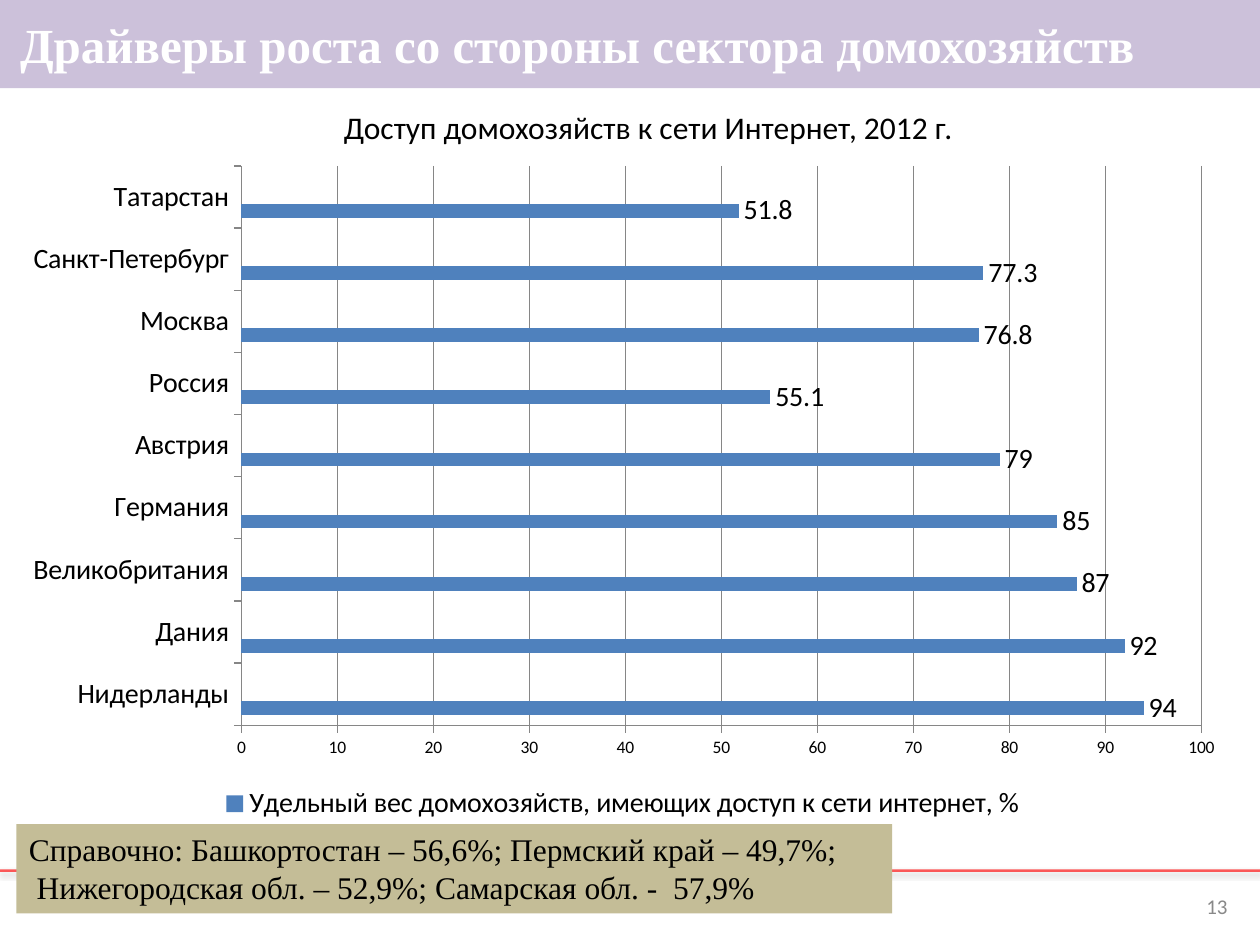
from lxml import etree
from pptx import Presentation
from pptx.chart.data import CategoryChartData
from pptx.dml.color import RGBColor
from pptx.enum.chart import XL_CHART_TYPE, XL_LABEL_POSITION, XL_LEGEND_POSITION, XL_TICK_MARK
from pptx.enum.shapes import MSO_CONNECTOR, MSO_SHAPE
from pptx.enum.text import MSO_ANCHOR, PP_ALIGN
from pptx.oxml import parse_xml
from pptx.oxml.ns import nsdecls, qn
from pptx.util import Pt

BAR = XL_CHART_TYPE.BAR_CLUSTERED
OUTSIDE_END = XL_LABEL_POSITION.OUTSIDE_END
BOTTOM = XL_LEGEND_POSITION.BOTTOM
TICK_OUT, TICK_NONE = XL_TICK_MARK.OUTSIDE, XL_TICK_MARK.NONE
STRAIGHT = MSO_CONNECTOR.STRAIGHT
RECTANGLE = MSO_SHAPE.RECTANGLE
TOP, MIDDLE = MSO_ANCHOR.TOP, MSO_ANCHOR.MIDDLE
LEFT, RIGHT, JUSTIFY = PP_ALIGN.LEFT, PP_ALIGN.RIGHT, PP_ALIGN.JUSTIFY

SERIF, SANS = "Times New Roman", "Calibri"
BLACK, WHITE, GRAY, AXIS_GRAY = "000000", "FFFFFF", "898989", "868686"
LILAC, SAND, RED = "CCC1DA", "C4BD97", "FF0000"
SERIES_COLORS = ["4F81BD", "C0504D", "9BBB59"]

HOUSEHOLD_ACCESS = {
    "Нидерланды": 94,
    "Дания": 92,
    "Великобритания": 87,
    "Германия": 85,
    "Австрия": 79,
    "Россия": 55.1,
    "Москва": 76.8,
    "Санкт-Петербург": 77.3,
    "Татарстан": 51.8,
}
ACCESS_SERIES = "Удельный вес домохозяйств, имеющих доступ к сети интернет, %"
EMPTY_SERIES = ["Series 2", "Столбец2"]
PLOT_AREA = {"x": 0.19, "y": 0.02, "w": 0.78, "h": 0.83}


def color(value):
    return RGBColor.from_string(value)


def apply(target, values):
    for name, value in values.items():
        setattr(target, name, value)


class SlideBuilder:
    def __init__(self, presentation):
        self.slide = presentation.slides.add_slide(presentation.slide_layouts[6])

    def style_font(self, font, size, name=SANS, hue=BLACK, bold=False):
        apply(font, {"size": Pt(size), "name": name, "bold": bold})
        font.color.rgb = color(hue)

    def fill_text(self, shape, lines, font, align=LEFT, frame=None):
        text_frame = shape.text_frame
        apply(text_frame, {"word_wrap": True, "vertical_anchor": TOP, **(frame or {})})
        for index, line in enumerate(lines):
            paragraph = text_frame.add_paragraph() if index else text_frame.paragraphs[0]
            paragraph.alignment = align
            run = paragraph.add_run()
            run.text = line
            self.style_font(run.font, **font)

    def text(self, box, lines, font, **layout):
        shape = self.slide.shapes.add_textbox(*map(Pt, box))
        self.fill_text(shape, lines, font, **layout)

    def panel(self, box, fill, lines, font, **layout):
        shape = self.slide.shapes.add_shape(RECTANGLE, *map(Pt, box))
        shape.shadow.inherit = False
        shape.fill.solid()
        shape.fill.fore_color.rgb = color(fill)
        shape.line.fill.background()
        self.fill_text(shape, lines, font, **layout)

    def rule(self, start, end, hue, width):
        line = self.slide.shapes.add_connector(STRAIGHT, *map(Pt, (*start, *end)))
        line.line.color.rgb = color(hue)
        line.line.width = Pt(width)
        properties = line._element.spPr
        fill_color = properties.find(".//" + qn("a:srgbClr"))
        etree.SubElement(fill_color, qn("a:alpha"), val="64000")
        properties.append(parse_xml(
            f'<a:effectLst {nsdecls("a")}><a:outerShdw blurRad="{Pt(3.1)}" dist="{Pt(1.6)}" '
            'dir="5400000" rotWithShape="0"><a:srgbClr val="000000"><a:alpha val="38000"/>'
            '</a:srgbClr></a:outerShdw></a:effectLst>'))

    def bar_chart(self, box, values, name, empty_names):
        data = CategoryChartData()
        data.categories = list(values)
        data.add_series(name, list(values.values()))
        for empty_name in empty_names:
            data.add_series(empty_name, [None] * len(values))
        chart = self.slide.shapes.add_chart(BAR, *map(Pt, box), data).chart
        self.style_font(chart.font, 10)
        apply(chart, {"has_title": False, "has_legend": True})
        plot = chart.plots[0]
        apply(plot, {"gap_width": 150, "vary_by_categories": False})
        for series, hue in zip(plot.series, SERIES_COLORS):
            series.format.fill.solid()
            series.format.fill.fore_color.rgb = color(hue)
        labels = plot.series[0].data_labels
        apply(labels, {"show_value": True, "position": OUTSIDE_END})
        self.style_font(labels.font, 16)
        self.style_axes(chart)
        self.style_legend(chart.legend, len(empty_names))
        self.place_plot(chart)

    def style_axes(self, chart):
        categories, scale = chart.category_axis, chart.value_axis
        apply(scale, {"minimum_scale": 0, "maximum_scale": 100, "major_unit": 10,
                      "has_major_gridlines": True})
        for axis, size in ((categories, 16), (scale, 10)):
            apply(axis, {"major_tick_mark": TICK_OUT, "minor_tick_mark": TICK_NONE})
            self.style_font(axis.tick_labels.font, size)
        for line in (categories.format.line, scale.format.line, scale.major_gridlines.format.line):
            line.color.rgb = color(AXIS_GRAY)
            line.width = Pt(0.75)

    def style_legend(self, legend, hidden_count):
        apply(legend, {"position": BOTTOM, "include_in_layout": False})
        self.style_font(legend.font, 16)
        position = legend._element.find(qn("c:legendPos"))
        for index in reversed(range(hidden_count)):
            position.addnext(parse_xml(
                f'<c:legendEntry {nsdecls("c")}><c:idx val="{index}"/>'
                '<c:delete val="1"/></c:legendEntry>'))

    def place_plot(self, chart):
        area = chart._chartSpace.chart.plotArea
        for old_layout in area.findall(qn("c:layout")):
            area.remove(old_layout)
        layout = etree.Element(qn("c:layout"))
        manual = etree.SubElement(layout, qn("c:manualLayout"))
        settings = {"layoutTarget": "inner", "xMode": "edge", "yMode": "edge", **PLOT_AREA}
        for name, value in settings.items():
            etree.SubElement(manual, qn(f"c:{name}"), val=str(value))
        area.insert(0, layout)


def main():
    presentation = Presentation()
    apply(presentation, {"slide_width": Pt(720), "slide_height": Pt(540)})
    builder = SlideBuilder(presentation)
    builder.rule((0, 497.5), (720, 497.5), RED, 1.5)
    builder.bar_chart((4.3, 87.1, 703.4, 385.2), HOUSEHOLD_ACCESS, ACCESS_SERIES, EMPTY_SERIES)
    builder.text((671.8, 503.3, 36.7, 28.8), ["13"], {"size": 12, "hue": GRAY},
                 align=RIGHT, frame={"vertical_anchor": MIDDLE})
    builder.panel((0, 0, 720, 50.4), LILAC, ["Драйверы роста со стороны сектора домохозяйств"],
                  {"size": 28, "name": SERIF, "hue": WHITE, "bold": True}, align=JUSTIFY,
                  frame={"vertical_anchor": MIDDLE, "margin_left": Pt(11.5)})
    builder.text((189.4, 58.3, 370.8, 28.8), ["Доступ домохозяйств к сети Интернет, 2012 г."],
                 {"size": 18}, frame={"word_wrap": False})
    builder.panel((9.4, 470.9, 500.4, 51.1), SAND,
                  ["Справочно: Башкортостан – 56,6%; Пермский край – 49,7%;",
                   " Нижегородская обл. – 52,9%; Самарская обл. -  57,9%"],
                  {"size": 18, "name": SERIF})
    presentation.save("out.pptx")


if __name__ == "__main__":
    main()
